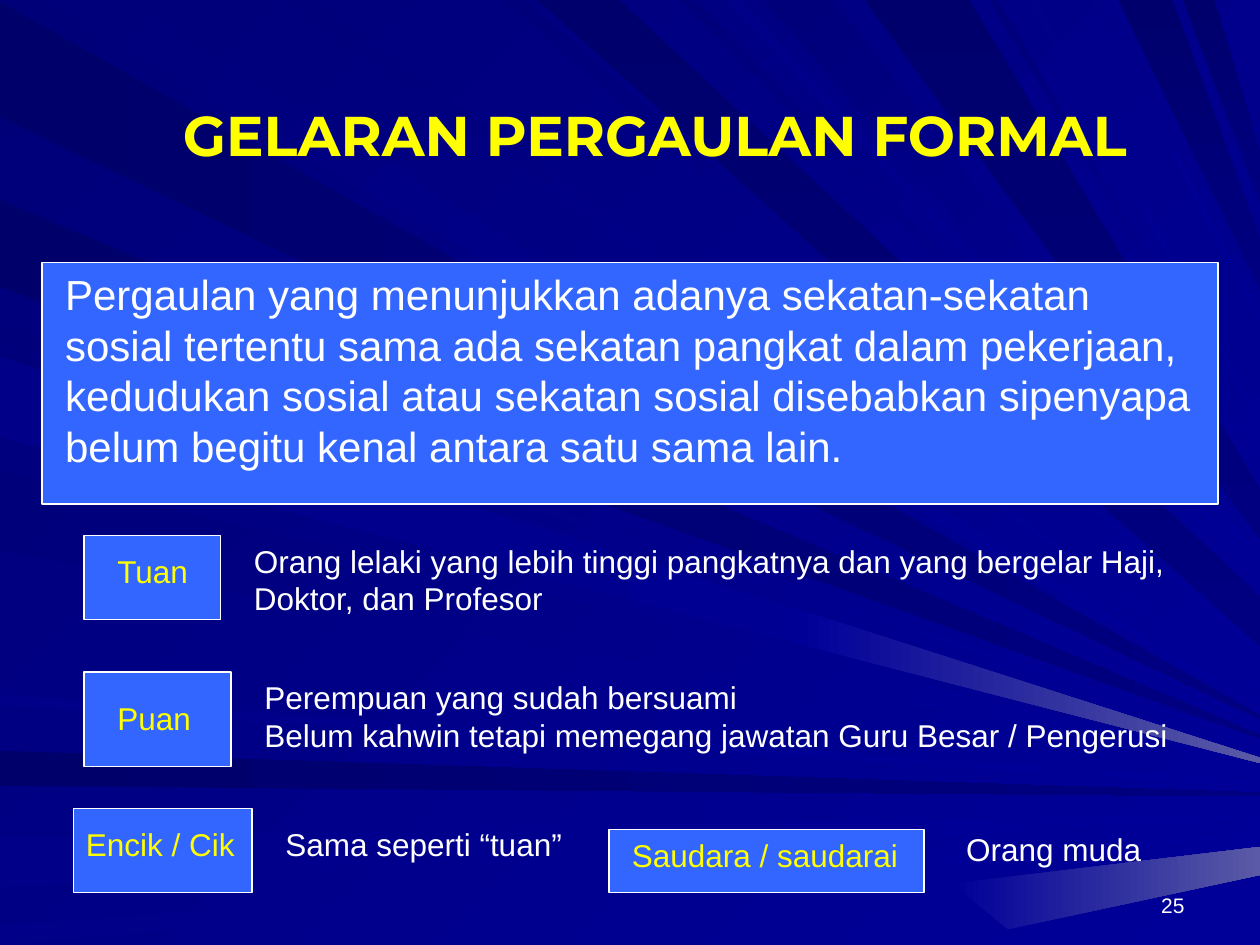
from dataclasses import dataclass

from pptx import Presentation
from pptx.dml.color import RGBColor
from pptx.enum.shapes import MSO_SHAPE
from pptx.enum.text import MSO_ANCHOR, MSO_AUTO_SIZE, PP_ALIGN
from pptx.oxml.xmlchemy import OxmlElement
from pptx.util import Pt


@dataclass(frozen=True)
class Theme:
    white: str = "FFFFFF"
    yellow: str = "FFFF00"
    panel: str = "3366FF"
    background: tuple = ("000078", "000099", 45)
    dark_ray: tuple = ("00006B", "000080", 0)
    light_ray: tuple = ("00007B", "000099", 45)
    bright_ray: tuple = ("000088", "000099", 0)
    broad_ray: tuple = ("00006D", "000080", 90)
    glow: tuple = ("000099", "5A5AA6", 0)
    heading_font: str = "Montserrat"
    text_font: str = "Arial"
    title_size: int = 32
    definition_size: int = 24
    entry_size: int = 18
    number_size: int = 12
    border: float = 0.75


THEME = Theme()
WIDTH, HEIGHT = 720, 540

TITLE = "GELARAN PERGAULAN FORMAL"
TITLE_BOX = (90, 54, 568.8, 44.6)
DEFINITION = [
    "Pergaulan yang menunjukkan adanya sekatan-sekatan",
    "sosial tertentu sama ada sekatan pangkat dalam pekerjaan,",
    "kedudukan sosial atau sekatan sosial disebabkan sipenyapa",
    "belum begitu kenal antara satu sama lain.",
]
DEFINITION_PANEL = (24, 150, 672, 138)
DEFINITION_BOX = (30, 150, 658, 122.4)
NUMBER = "25"
NUMBER_BOX = (516, 492, 168, 36)

# panel, then term and meaning with left, top and width
ENTRIES = [
    ((48, 306, 78, 48), ["Tuan"], (60, 312, 60.5),
     ["Orang lelaki yang lebih tinggi pangkatnya dan yang bergelar Haji,",
      "Doktor, dan Profesor"], (138, 306, 539.3)),
    ((48, 384, 84, 54), ["Puan"], (60, 396, 56.2),
     ["Perempuan yang sudah bersuami",
      "Belum kahwin tetapi memegang jawatan Guru Besar / Pengerusi"],
     (144, 384, 530.6)),
    ((42, 462, 102, 48), ["Encik / Cik"], (42, 468, 99.4),
     ["Sama seperti “tuan”"], (156, 468, 172.8)),
    ((348, 474, 180, 36), ["Saudara / saudarai"], (354, 474, 166.3),
     ["Orang muda"], (545, 471, 114.5)),
]

# edge, paint, width at the tip, then start and end on the edge and height of the tip
RAY_GROUPS = [
    ("left", THEME.dark_ray, 2, [(1, 67, 410), (114, 164, 421), (429, 449, 454)]),
    ("left", THEME.light_ray, 2, [(186, 194, 424), (200, 246, 432), (269, 315, 436)]),
    ("left", THEME.bright_ray, 4,
     [(479, 507, 466), (529, 540, 477), (397, 403, 448), (204, 250, 434)]),
    ("top", THEME.light_ray, 2,
     [(19, 73, 405), (287, 300, 373), (389, 397, 333), (436, 476, 321),
      (162, 178, 396), (565, 570, 257)]),
    ("top", THEME.bright_ray, 2, [(415, 423, 327), (587, 593, 242), (623, 628, 182)]),
    ("top", THEME.broad_ray, 28,
     [(307, 354, 355), (494, 554, 294), (639, 670, 151), (676, 694, 101)]),
]
GLOWS = [
    [(459, 349), (456, 368), (WIDTH, 436), (WIDTH, 433)],
    [(WIDTH, 500), (WIDTH, 484), (544, 505), (576, 531)],
]


def points(values):
    return [Pt(value) for value in values]


def paint(fill, start, end, angle):
    fill.gradient()
    fill.gradient_angle = (360 - angle) % 360
    for stop, color in zip(fill.gradient_stops, (start, end)):
        stop.color.rgb = RGBColor.from_string(color)


def add_polygon(slide, corners, colors):
    first, *others = [points(corner) for corner in corners]
    builder = slide.shapes.build_freeform(*first)
    builder.add_line_segments(others, close=True)
    shape = builder.convert_to_shape()
    shape.shadow.inherit = False
    shape.line.fill.background()
    paint(shape.fill, *colors)


def add_rays(slide):
    for edge, colors, spread, rays in RAY_GROUPS:
        for start, end, tip in rays:
            high, low = (WIDTH, tip - spread / 2), (WIDTH, tip + spread / 2)
            if edge == "left":
                corners = [(0, start), high, low, (0, end)]
            else:
                corners = [(start, 0), low, high, (end, 0)]
            add_polygon(slide, corners, colors)
    for corners in GLOWS:
        add_polygon(slide, corners, THEME.glow)


def add_panel(slide, box):
    shape = slide.shapes.add_shape(MSO_SHAPE.RECTANGLE, *points(box))
    shape.shadow.inherit = False
    shape.fill.solid()
    shape.fill.fore_color.rgb = RGBColor.from_string(THEME.panel)
    shape.line.color.rgb = RGBColor.from_string(THEME.white)
    shape.line.width = Pt(THEME.border)


def write(shape, lines, size, color, font=THEME.text_font, align=PP_ALIGN.LEFT,
          anchor=MSO_ANCHOR.TOP, bold=False, wrap=False):
    frame = shape.text_frame
    frame.auto_size = MSO_AUTO_SIZE.NONE
    frame.word_wrap = wrap
    frame.vertical_anchor = anchor
    for index, line in enumerate(lines):
        paragraph = frame.add_paragraph() if index else frame.paragraphs[0]
        paragraph.alignment = align
        paragraph.space_before = Pt(0)
        run = paragraph.add_run()
        run.text = line
        run.font.name = font
        run.font.size = Pt(size)
        run.font.bold = bold
        run.font.color.rgb = RGBColor.from_string(color)


def add_entry_text(slide, box, lines, color):
    height = 7.2 + 1.2 * THEME.entry_size * len(lines)
    textbox = slide.shapes.add_textbox(*points((*box, height)))
    write(textbox, lines, THEME.entry_size, color)


def place(placeholder, box):
    placeholder.left, placeholder.top, placeholder.width, placeholder.height = points(box)
    placeholder.element.getparent().append(placeholder.element)


def remove_bullets(shape):
    for paragraph in shape.text_frame.paragraphs:
        properties = paragraph._p.get_or_add_pPr()
        properties.set("marL", "0")
        properties.set("indent", "0")
        properties.append(OxmlElement("a:buNone"))


def main():
    presentation = Presentation()
    presentation.slide_width, presentation.slide_height = points((WIDTH, HEIGHT))
    slide = presentation.slides.add_slide(presentation.slide_layouts[1])
    title, definition = slide.placeholders
    paint(slide.background.fill, *THEME.background)
    add_rays(slide)
    number = slide.shapes.add_textbox(*points(NUMBER_BOX))
    write(number, [NUMBER], THEME.number_size, THEME.white,
          align=PP_ALIGN.RIGHT, anchor=MSO_ANCHOR.BOTTOM, wrap=True)
    for box in [DEFINITION_PANEL] + [entry[0] for entry in ENTRIES]:
        add_panel(slide, box)
    place(title, TITLE_BOX)
    write(title, [TITLE], THEME.title_size, THEME.yellow, font=THEME.heading_font,
          align=PP_ALIGN.CENTER, bold=True)
    place(definition, DEFINITION_BOX)
    write(definition, DEFINITION, THEME.definition_size, THEME.white,
          align=PP_ALIGN.JUSTIFY, wrap=True)
    remove_bullets(definition)
    for _, term, term_box, meaning, meaning_box in ENTRIES:
        add_entry_text(slide, term_box, term, THEME.yellow)
        add_entry_text(slide, meaning_box, meaning, THEME.white)
    presentation.save("out.pptx")


if __name__ == "__main__":
    main()
